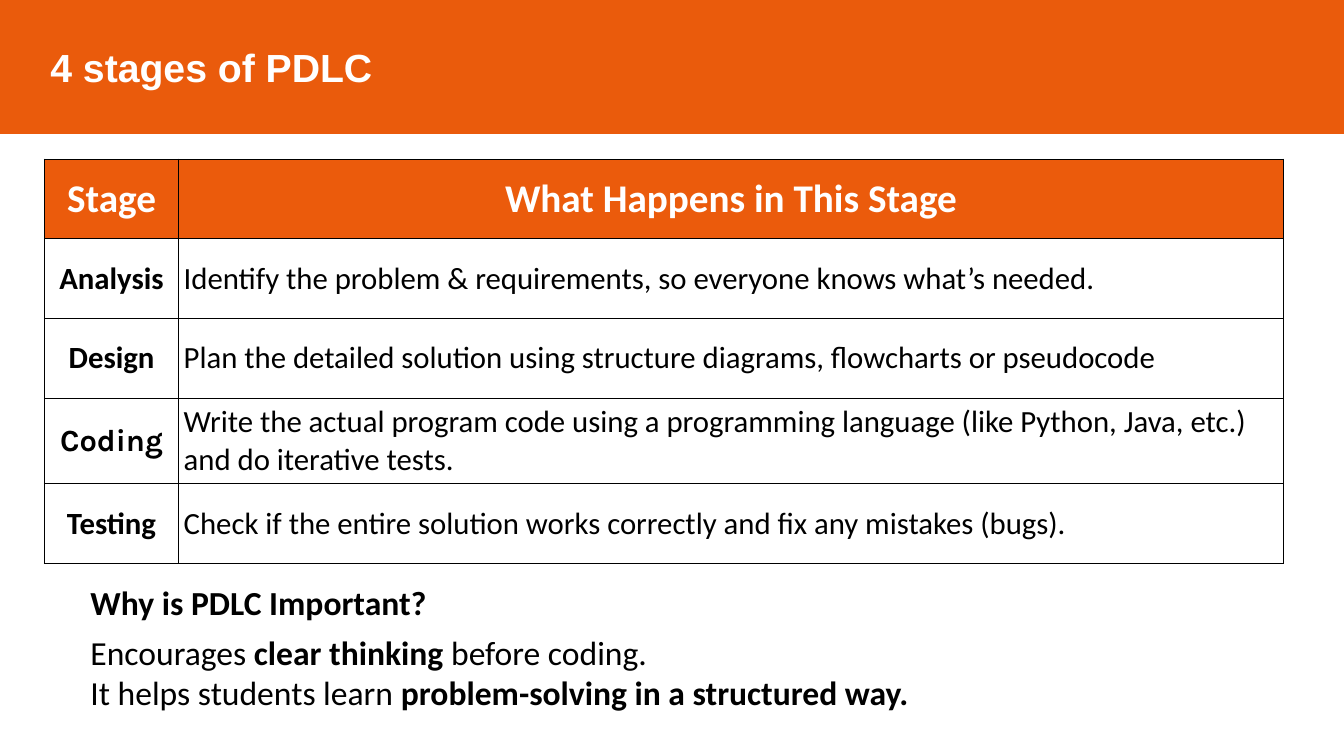
from lxml.etree import SubElement
from pptx import Presentation
from pptx.dml.color import RGBColor
from pptx.enum.shapes import MSO_SHAPE
from pptx.enum.text import MSO_ANCHOR, PP_ALIGN
from pptx.oxml.ns import qn
from pptx.util import Cm, Pt

COLORS = {
    "banner": "EA5B0C",
    "header": "EB5B0C",
    "white": "FFFFFF",
    "black": "000000",
}

STAGES = [
    ("Analysis", "Identify the problem & requirements, so everyone knows what’s needed."),
    ("Design", "Plan the detailed solution using structure diagrams, flowcharts or pseudocode"),
    ("Coding", "Write the actual program code using a programming language "
               "(like Python, Java, etc.) and do iterative tests."),
    ("Testing", "Check if the entire solution works correctly and fix any mistakes (bugs)."),
]

REASONS = [
    [("Encourages ", False), ("clear thinking", True), (" before coding.", False)],
    [("It helps students learn ", False), ("problem-solving in a structured way.", True)],
]


def color(name):
    return RGBColor.from_string(COLORS[name])


def add_span(para, text, size, ink="black", name="Calibri", bold=False):
    span = para.add_run()
    span.text = text
    formats = {"size": Pt(size), "name": name, "bold": bold}
    for attribute, value in formats.items():
        setattr(span.font, attribute, value)
    span.font.color.rgb = color(ink)


def add_banner(page, width, title):
    banner = page.shapes.add_shape(MSO_SHAPE.RECTANGLE, 0, 0, width, Cm(3.36))
    banner.shadow.inherit = False
    banner.fill.solid()
    banner.fill.fore_color.rgb = color("banner")
    banner.line.color.rgb = color("banner")
    banner.line.width = Pt(1)
    banner.text_frame.vertical_anchor = MSO_ANCHOR.MIDDLE
    para = banner.text_frame.paragraphs[0]
    para.alignment = PP_ALIGN.LEFT
    properties = para._p.get_or_add_pPr()
    properties.set("marL", str(Cm(1.02)))
    properties.set("indent", "0")
    add_span(para, title, 28, "white", "Arial", True)


def add_borders(cell):
    properties = cell._tc.get_or_add_tcPr()
    for side in ("a:lnL", "a:lnR", "a:lnT", "a:lnB"):
        border = SubElement(properties, qn(side), w=str(Pt(1)))
        fill = SubElement(border, qn("a:solidFill"))
        SubElement(fill, qn("a:srgbClr"), val=COLORS["black"])


def fill_cell(cell, text, size, align, fill=None, **font):
    formats = {"vertical_anchor": MSO_ANCHOR.MIDDLE}
    for side in ("left", "right", "top", "bottom"):
        formats[f"margin_{side}"] = Cm(0.13)
    for attribute, value in formats.items():
        setattr(cell, attribute, value)
    add_borders(cell)
    if fill:
        cell.fill.solid()
        cell.fill.fore_color.rgb = color(fill)
    else:
        cell.fill.background()
    para = cell.text_frame.paragraphs[0]
    para.alignment = align
    add_span(para, text, size, **font)


def add_stage_table(page, headings, stages):
    widths = [Cm(3.38), Cm(27.84)]
    row_height = Cm(2.01)
    count = len(stages) + 1
    table = page.shapes.add_table(count, len(widths), Cm(1.12), Cm(4.01),
                                  sum(widths), row_height * count).table
    for column, width in zip(table.columns, widths):
        column.width = width
    for row in table.rows:
        row.height = row_height

    for index, heading in enumerate(headings):
        fill_cell(table.cell(0, index), heading, 28, PP_ALIGN.CENTER,
                  "header", ink="white", bold=True)
    for index, (stage, action) in enumerate(stages, start=1):
        name = "Karla" if stage == "Coding" else "Calibri"
        fill_cell(table.cell(index, 0), stage, 22, PP_ALIGN.CENTER, name=name, bold=True)
        fill_cell(table.cell(index, 1), action, 22, PP_ALIGN.LEFT)


def add_text(page, top, width, height, lines):
    box = page.shapes.add_textbox(Cm(2.03), top, width, height)
    frame = box.text_frame
    frame.word_wrap = True
    for index, line in enumerate(lines):
        para = frame.add_paragraph() if index else frame.paragraphs[0]
        for text, bold in line:
            add_span(para, text, 24, bold=bold)


def main():
    deck = Presentation()
    deck.slide_width, deck.slide_height = Cm(33.87), Cm(19.05)
    page = deck.slides.add_slide(deck.slide_layouts[6])

    # Title banner
    add_banner(page, deck.slide_width, "4 stages of PDLC")

    # Stages and what they involve
    add_stage_table(page, ["Stage", "What Happens in This Stage"], STAGES)

    # Importance
    add_text(page, Cm(14.53), Cm(9.42), Cm(1.27), [[("Why is PDLC Important?", True)]])
    add_text(page, Cm(15.8), Cm(29.82), Cm(2.31), REASONS)

    deck.save("out.pptx")


if __name__ == "__main__":
    main()
